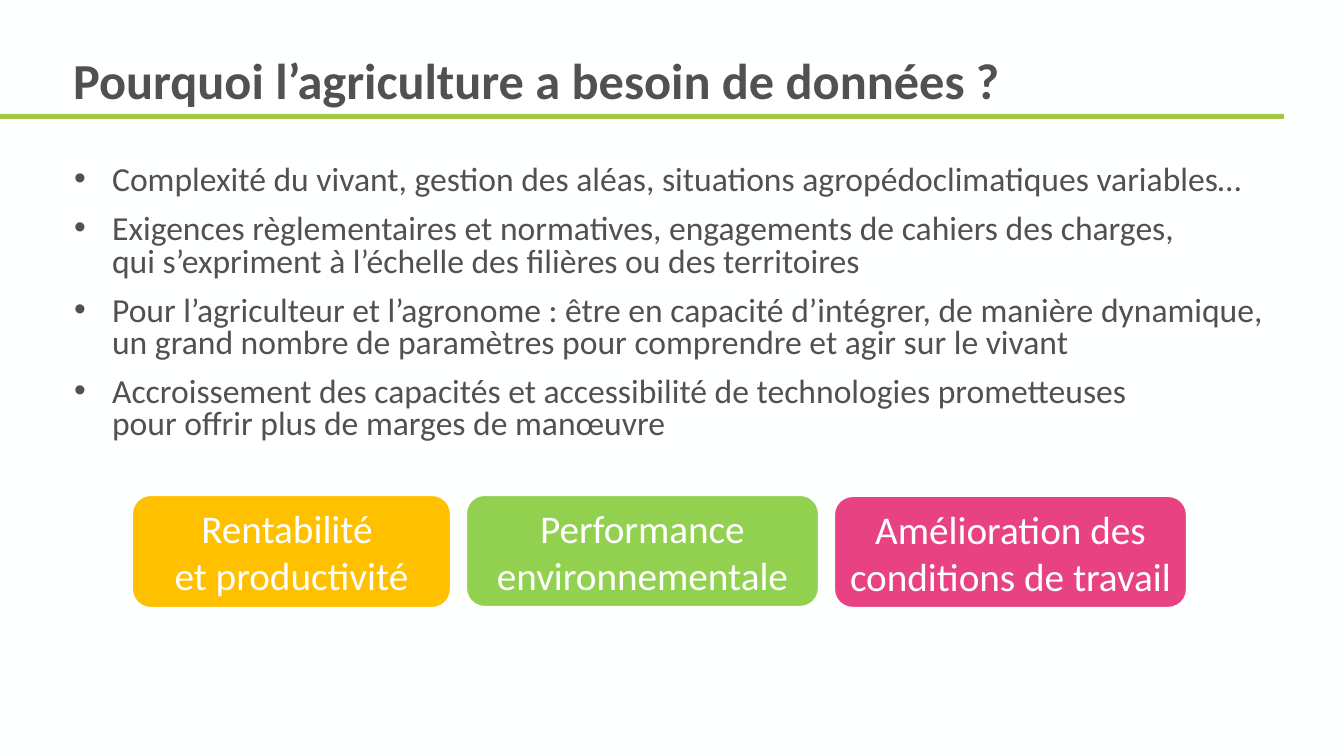
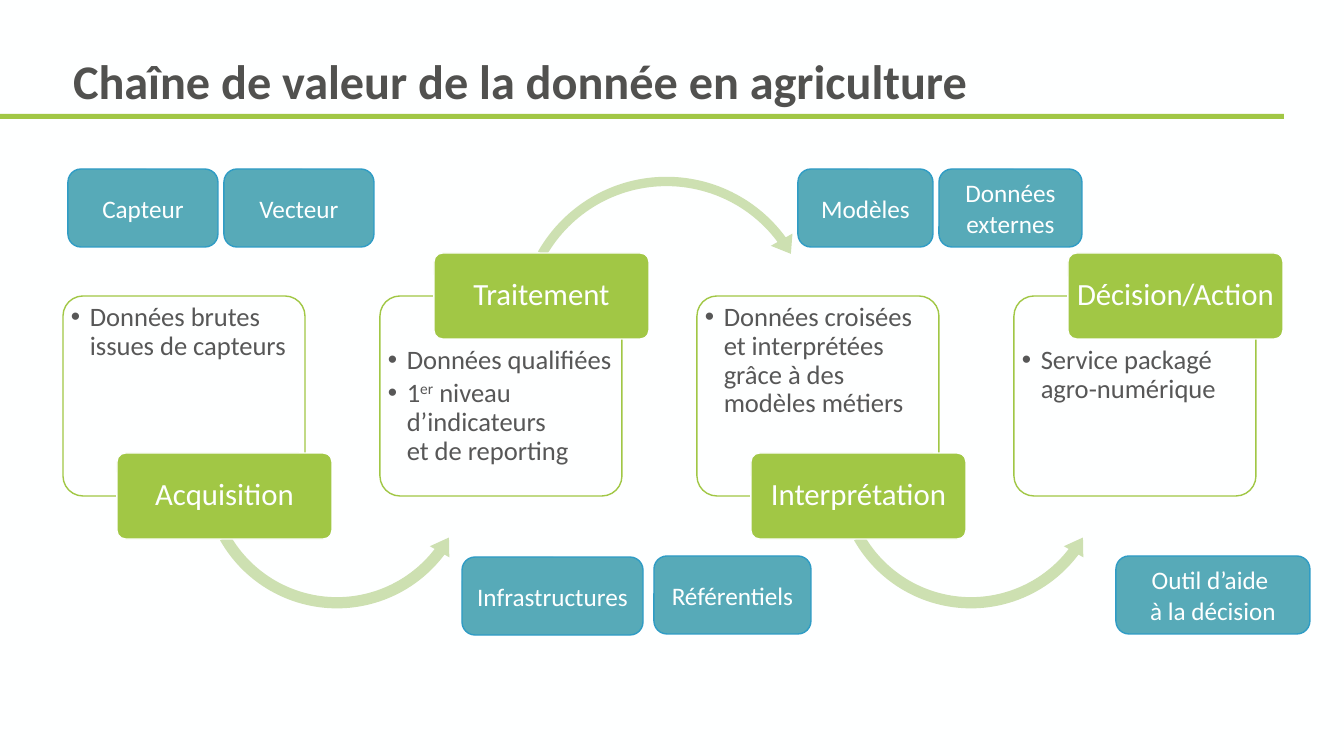
"""Build two slides on why agriculture needs data and on its data value chain."""
from lxml.etree import SubElement
from pptx import Presentation
from pptx.dml.color import RGBColor
from pptx.enum.shapes import MSO_SHAPE as Preset
from pptx.enum.text import MSO_ANCHOR as Anchor, MSO_AUTO_SIZE as AutoSize, PP_ALIGN as Align
from pptx.oxml.ns import qn
from pptx.util import Emu, Pt

WHITE = RGBColor(0xFE, 0xFF, 0xFF)
DARK = RGBColor(0x51, 0x51, 0x4F)
GREY = RGBColor(0x57, 0x57, 0x57)
GREEN = RGBColor(0xA1, 0xC7, 0x45)
PALE_GREEN = RGBColor(0xCD, 0xE0, 0xB1)
TEAL = RGBColor(0x57, 0xAA, 0xB8)
TEAL_EDGE = RGBColor(0x2F, 0x9C, 0xC5)
AMBER = RGBColor(0xFF, 0xC0, 0x00)
LIME = RGBColor(0x92, 0xD0, 0x50)
PINK = RGBColor(0xE9, 0x42, 0x82)

FONT = "Calibri"
PX_PER_INCH = 100.8
SLIDE_SIZE = (1344, 756)
TITLE_BOX = (63, 40, 1222, 87)
RULE_BOX = (0, 114, 1284, 5)
BODY_BOX = (64, 161, 1221, 304)

NEEDS_TITLE = ("Pourquoi l’agriculture a besoin de données ?", 36)
NEEDS = [
    "Complexité du vivant, gestion des aléas, situations agropédoclimatiques variables…",
    "Exigences règlementaires et normatives, engagements de cahiers des charges, "
    "\vqui s’expriment à l’échelle des filières ou des territoires",
    "Pour l’agriculteur et l’agronome : être en capacité d’intégrer, de manière dynamique, "
    "un grand nombre de paramètres pour comprendre et agir sur le vivant",
    "Accroissement des capacités et accessibilité de technologies prometteuses "
    "\vpour offrir plus de marges de manœuvre",
]
BENEFITS = [
    ("Rentabilité \vet productivité", (132, 495, 319, 113), AMBER),
    ("Performance environnementale", (466, 495, 353, 112), LIME),
    ("Amélioration des conditions de travail", (834, 496, 353, 112), PINK),
]

CHAIN_TITLE = ("Chaîne de valeur de la donnée en agriculture", 34.5)
STAGES = [
    ("Acquisition", ["Données brutes issues de capteurs"]),
    ("Traitement", ["Données qualifiées", "1^er^ niveau d’indicateurs\vet de reporting"]),
    ("Interprétation", ["Données croisées et interprétées \vgrâce à des modèles métiers"]),
    ("Décision/Action", ["Service packagé \vagro-numérique"]),
]
PANEL_LEFT, PANEL_TOP, PANEL_PITCH = 63, 296, 317
PANEL_SIZE = (242, 200)
LABEL_OFFSET, LABEL_SIZE = 54, (215, 86)
LOWER_ARROW = (Preset.LEFT_CIRCULAR_ARROW, 134, 334, 280, (0.04, 4.55, 22.3, 90.25, 0.04))
UPPER_ARROW = (Preset.CIRCULAR_ARROW, 131, 169, 311, (0.03, 4.06, 194.18, 125.76, 0.04))

TOOL_HEIGHT = 78
TOOLS = [
    ("Capteur", 68, 169, 150),
    ("Vecteur", 224, 169, 150),
    ("Référentiels", 654, 556, 157),
    ("Modèles", 798, 169, 135),
    ("Outil d’aide \và la décision", 1116, 556, 194),
    ("Infrastructures", 462, 557, 181),
    ("Données externes", 939, 169, 143),
]


def px(length):
    return Emu(round(length * 914400 / PX_PER_INCH))


def place(shape, box):
    shape.left, shape.top, shape.width, shape.height = map(px, box)


def add_bullet(paragraph, indent):
    properties = paragraph._p.get_or_add_pPr()
    properties.set("marL", str(px(indent)))
    properties.set("indent", str(-px(indent)))
    SubElement(properties, qn("a:buFont")).set("typeface", "Arial")
    SubElement(properties, qn("a:buChar")).set("char", "•")


def add_runs(paragraph, text):
    for part_index, part in enumerate(text.split("^")):
        for line_index, line in enumerate(part.split("\v")):
            if line_index:
                paragraph.add_line_break()
            run = paragraph.add_run()
            run.text = line
            if part_index % 2:
                run.font._element.set("baseline", "30000")


def write(shape, texts, size, color, *, bold=False, align=Align.LEFT, anchor=Anchor.MIDDLE,
          spacing=1.0, before=0, after=0, indent=0, insets=None):
    frame = shape.text_frame
    frame.word_wrap = True
    frame.auto_size = AutoSize.NONE
    frame.vertical_anchor = anchor
    if insets:
        (frame.margin_left, frame.margin_top,
         frame.margin_right, frame.margin_bottom) = map(px, insets)
    for index, text in enumerate(texts):
        paragraph = frame.add_paragraph() if index else frame.paragraphs[0]
        add_runs(paragraph, text)
        if indent:
            add_bullet(paragraph, indent)
        paragraph.alignment = align
        paragraph.line_spacing = spacing
        paragraph.space_before = Pt(before if index else 0)
        paragraph.space_after = Pt(after)
        font = paragraph.font
        font.name, font.size, font.bold = FONT, Pt(size), bold
        font.color.rgb = color


def add_shape(slide, preset, box, fill, line=None, line_width=1.0, adjustments=()):
    shape = slide.shapes.add_shape(preset, *map(px, box))
    shape.shadow.inherit = False
    shape.fill.solid()
    shape.fill.fore_color.rgb = fill
    if line is None:
        shape.line.fill.background()
    else:
        shape.line.color.rgb = line
        shape.line.width = Pt(line_width)
    for index, value in enumerate(adjustments):
        shape.adjustments[index] = value
    return shape


def add_slide(presentation, layout_index, title, size):
    slide = presentation.slides.add_slide(presentation.slide_layouts[layout_index])
    place(slide.shapes.title, TITLE_BOX)
    write(slide.shapes.title, [title], size, DARK, bold=True, spacing=0.9)
    return slide


def style_master(presentation, slide):
    master = presentation.slide_master
    master.background.fill.solid()
    master.background.fill.fore_color.rgb = WHITE
    rule = add_shape(slide, Preset.RECTANGLE, RULE_BOX, GREEN)
    master.shapes.element.append(rule.element)


def fill_needs(slide):
    body = slide.placeholders[1]
    place(body, BODY_BOX)
    write(body, NEEDS, 24, DARK, anchor=Anchor.TOP, spacing=0.8, before=12, indent=38)
    for text, box, color in BENEFITS:
        card = add_shape(slide, Preset.ROUNDED_RECTANGLE, box, color, WHITE, 1.5)
        write(card, [text], 28, WHITE, align=Align.CENTER, insets=(8, 5, 8, 5))


def add_stage(slide, index, name, points):
    left = PANEL_LEFT + index * PANEL_PITCH
    label_above = index % 2 == 1
    panel = add_shape(slide, Preset.ROUNDED_RECTANGLE, (left, PANEL_TOP, *PANEL_SIZE),
                      WHITE, GREEN, adjustments=[0.1])
    write(panel, points, 19, GREY, anchor=Anchor.TOP, spacing=0.9, after=3, indent=19,
          insets=(2, 45 if label_above else 2, 2, 2))
    if index < len(STAGES) - 1:
        preset, offset, top, side, adjustments = UPPER_ARROW if label_above else LOWER_ARROW
        add_shape(slide, preset, (left + offset, top, side, side), PALE_GREEN,
                  adjustments=adjustments)
    middle = PANEL_TOP if label_above else PANEL_TOP + PANEL_SIZE[1]
    label_top = middle - LABEL_SIZE[1] // 2
    label = add_shape(slide, Preset.ROUNDED_RECTANGLE,
                      (left + LABEL_OFFSET, label_top, *LABEL_SIZE),
                      GREEN, WHITE, adjustments=[0.1])
    write(label, [name], 22, WHITE, align=Align.CENTER, spacing=0.9, insets=(3, 3, 3, 3))


def fill_chain(slide):
    for index, (name, points) in enumerate(STAGES):
        add_stage(slide, index, name, points)
    for text, left, top, width in TOOLS:
        tool = add_shape(slide, Preset.ROUNDED_RECTANGLE, (left, top, width, TOOL_HEIGHT),
                         TEAL, TEAL_EDGE)
        write(tool, [text], 18, WHITE, align=Align.CENTER, insets=(8, 5, 8, 5))


def main():
    presentation = Presentation()
    presentation.slide_width, presentation.slide_height = map(px, SLIDE_SIZE)
    needs_slide = add_slide(presentation, 1, *NEEDS_TITLE)
    style_master(presentation, needs_slide)
    fill_needs(needs_slide)
    fill_chain(add_slide(presentation, 5, *CHAIN_TITLE))
    presentation.save("out.pptx")


if __name__ == "__main__":
    main()
